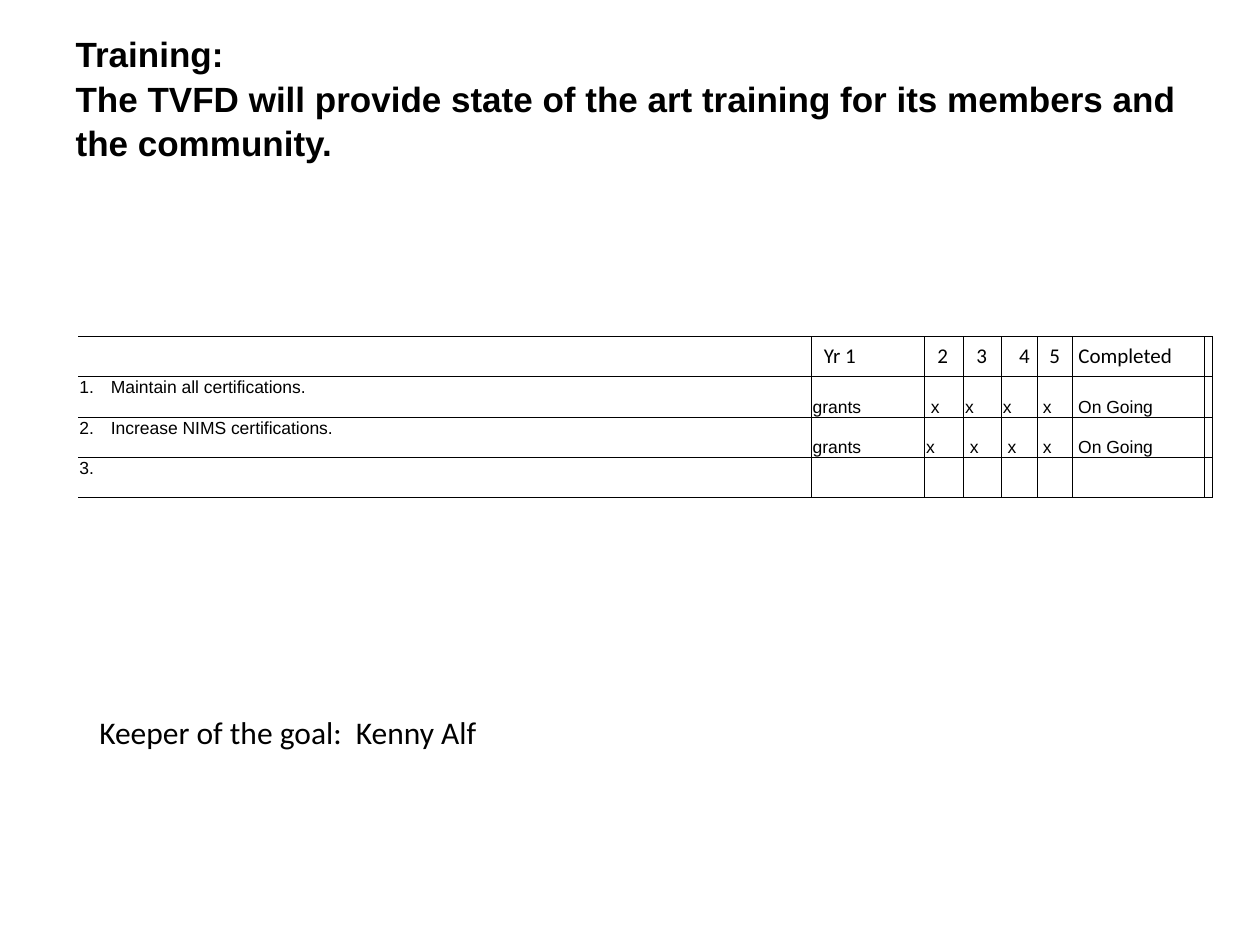
"""Build the training goal slide with its five-year progress table."""
from dataclasses import dataclass

from lxml.etree import SubElement
from pptx import Presentation
from pptx.dml.color import RGBColor
from pptx.enum.text import MSO_ANCHOR, MSO_AUTO_SIZE, PP_ALIGN
from pptx.oxml.ns import qn
from pptx.util import Inches, Pt


@dataclass(frozen=True)
class Theme:
    ink: str = "000000"
    heading_font: str = "Arial"
    body_font: str = "Calibri"
    title_size: int = 20
    cell_size: int = 10
    header_size: int = 12
    keeper_size: int = 18
    rule_width: float = 0.5


def style_text(paragraph, font_name, size, bold=False):
    for font in [paragraph.font] + [run.font for run in paragraph.runs]:
        font.name = font_name
        font.size = Pt(size)
        font.bold = bold
        font.color.rgb = RGBColor.from_string(theme.ink)


def draw_border(cell, side, visible):
    width = str(Pt(theme.rule_width))
    line = SubElement(cell._tc.get_or_add_tcPr(), qn(f"a:ln{side}"), w=width)
    if visible:
        fill = SubElement(line, qn("a:solidFill"))
        SubElement(fill, qn("a:srgbClr"), val=theme.ink)
    else:
        SubElement(line, qn("a:noFill"))


theme = Theme()
deck = Presentation()
deck.slide_width, deck.slide_height = Inches(10), Inches(7.5)
slide = deck.slides.add_slide(deck.slide_layouts[5])

title = slide.shapes.title
title.left, title.top = Inches(0.5), Inches(0.3)
title.width, title.height = Inches(9), Inches(1.25)
heading = title.text_frame
heading.text = "Training:\vThe TVFD will provide state of the art training for its members and the community."
heading.word_wrap = True
heading.auto_size = MSO_AUTO_SIZE.NONE
heading.vertical_anchor = MSO_ANCHOR.MIDDLE
heading.margin_bottom = Inches(0.36)
heading.paragraphs[0].alignment = PP_ALIGN.LEFT
heading.paragraphs[0].line_spacing = 1.05
style_text(heading.paragraphs[0], theme.heading_font, theme.title_size, True)

column_widths = [5.82, 0.9, 0.31, 0.3, 0.28, 0.28, 1.05, 0.06]
row_height = 0.32
goals = [
    [""] * 8,
    ["Maintain all certifications.", "grants", " x", "x ", "x ", " x", " On Going", ""],
    ["Increase NIMS certifications.", "grants", "x ", " x", " x", " x", " On Going", ""],
    ["3."] + [""] * 7,
]
progress = slide.shapes.add_table(
    len(goals), len(column_widths), Inches(0.62), Inches(2.67),
    Inches(sum(column_widths)), Inches(row_height * len(goals)),
).table
progress.first_row = progress.horz_banding = False
for column, width in zip(progress.columns, column_widths):
    column.width = Inches(width)
for row in progress.rows:
    row.height = Inches(row_height)

for row_index, goal in enumerate(goals):
    for column_index, entry in enumerate(goal):
        cell = progress.cell(row_index, column_index)
        cell.text = entry
        cell.margin_left = cell.margin_right = cell.margin_top = Inches(0.01)
        cell.margin_bottom = 0
        cell.vertical_anchor = MSO_ANCHOR.BOTTOM if column_index else MSO_ANCHOR.TOP
        style_text(cell.text_frame.paragraphs[0], theme.heading_font, theme.cell_size)
        for side in "LRTB":
            draw_border(cell, side, side != "L" or column_index > 0)
        cell.fill.background()

for number in (1, 2):
    properties = progress.cell(number, 0).text_frame.paragraphs[0]._p.get_or_add_pPr()
    properties.set("marL", str(Inches(0.25)))
    properties.set("indent", str(-Inches(0.25)))
    numbering = properties.makeelement(
        qn("a:buAutoNum"), {"type": "arabicPeriod", "startAt": str(number)})
    properties.insert(0, numbering)

captions = [
    ("Yr 1\t2\t3\t4\t5\tCompleted", 6.44, 2.67, 3.18, 0.5, theme.header_size),
    ("Keeper of the goal:  Kenny Alf", 0.69, 5.61, 5.66, 0.4, theme.keeper_size),
]
for wording, left, top, width, height, size in captions:
    caption = slide.shapes.add_textbox(
        Inches(left), Inches(top), Inches(width), Inches(height)).text_frame
    caption.word_wrap = True
    caption.text = wording
    paragraph = caption.paragraphs[0]
    style_text(paragraph, theme.body_font, size)
    if "\t" in wording:
        stops = paragraph._p.get_or_add_pPr().makeelement(qn("a:tabLst"), {})
        paragraph._p.pPr.insert(0, stops)
        for stop in (0.9, 1.21, 1.55, 1.79, 2.02):
            SubElement(stops, qn("a:tab"), pos=str(Inches(stop)), algn="l")

deck.save("out.pptx")
